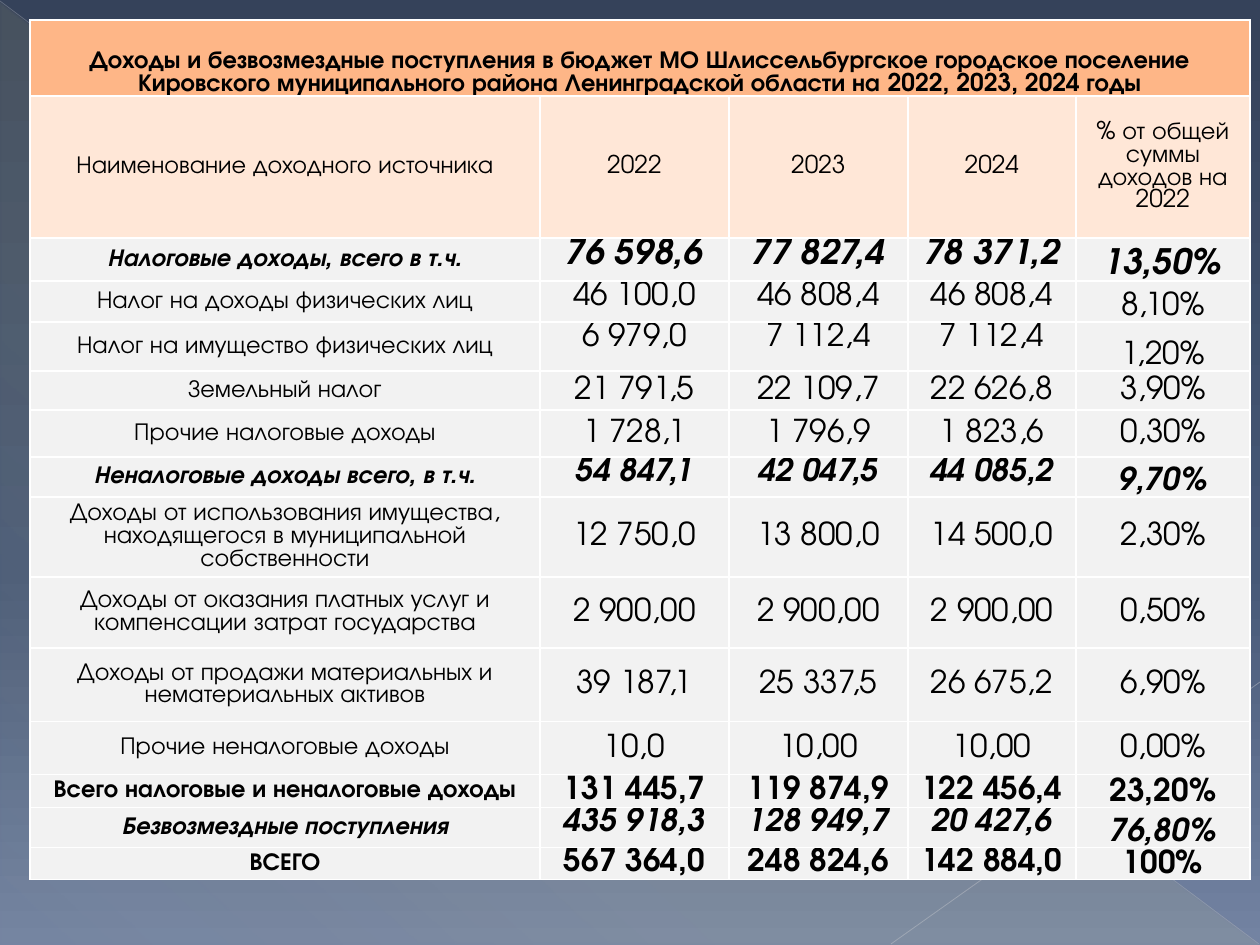
from lxml.etree import SubElement
from pptx import Presentation
from pptx.dml.color import RGBColor
from pptx.enum.shapes import MSO_CONNECTOR, MSO_SHAPE
from pptx.enum.text import MSO_ANCHOR as Anchor, PP_ALIGN
from pptx.oxml.ns import qn
from pptx.util import Pt

PX = 914400 / 126
FONT = "TeX Gyre Adventor"
BLACK = RGBColor(0x00, 0x00, 0x00)
WHITE = RGBColor(0xFF, 0xFF, 0xFF)
ORANGE = RGBColor(0xFE, 0xB6, 0x87)
PEACH = RGBColor(0xFF, 0xE7, 0xD7)
GREY = RGBColor(0xF2, 0xF2, 0xF2)
NAVY = RGBColor(0x35, 0x42, 0x5A)
SLATE = RGBColor(0x46, 0x58, 0x77)
STEEL = RGBColor(0x73, 0x83, 0xA2)
YELLOW = RGBColor(0xFF, 0xF3, 0x9D)
SILVER = RGBColor(0xBA, 0xBD, 0xC4)
LIGHT_SILVER = RGBColor(0xC1, 0xC4, 0xCA)

TITLE = ("Доходы и безвозмездные поступления в бюджет МО Шлиссельбургское городское "
         "поселение Кировского муниципального района Ленинградской области "
         "на 2022, 2023, 2024 годы")
HEADER = ("Наименование доходного источника", "2022", "2023", "2024",
          "% от общей суммы доходов на 2022")
COLUMNS = (510, 189, 179, 168, 174)
TITLE_HEIGHT, HEADER_HEIGHT = 76, 142

# height, value size, bold, italic, values split to top and bottom, texts
ROWS = (
    (43, 20, True, True, True,
     ("Налоговые доходы, всего в т.ч.", "76 598,6", "77 827,4", "78 371,2", "13,50%")),
    (41, 18, False, False, True,
     ("Налог на доходы физических лиц", "46 100,0", "46 808,4", "46 808,4", "8,10%")),
    (49, 18, False, False, True,
     ("Налог на имущество физических лиц", "6 979,0", "7 112,4", "7 112,4", "1,20%")),
    (39, 18, False, False, False,
     ("Земельный налог", "21 791,5", "22 109,7", "22 626,8", "3,90%")),
    (47, 18, False, False, False,
     ("Прочие налоговые доходы", "1 728,1", "1 796,9", "1 823,6", "0,30%")),
    (40, 18, True, True, True,
     ("Неналоговые доходы всего, в т.ч.", "54 847,1", "42 047,5", "44 085,2", "9,70%")),
    (80, 18, False, False, False,
     ("Доходы от использования имущества, находящегося в муниципальной собственности",
      "12 750,0", "13 800,0", "14 500,0", "2,30%")),
    (71, 18, False, False, False,
     ("Доходы от оказания платных услуг и компенсации затрат государства",
      "2 900,00", "2 900,00", "2 900,00", "0,50%")),
    (74, 18, False, False, False,
     ("Доходы от продажи материальных и нематериальных активов",
      "39 187,1", "25 337,5", "26 675,2", "6,90%")),
    (53, 18, False, False, False,
     ("Прочие неналоговые доходы", "10,0", "10,00", "10,00", "0,00%")),
    (33, 18, True, False, True,
     ("Всего налоговые и неналоговые доходы",
      "131 445,7", "119 874,9", "122 456,4", "23,20%")),
    (40, 18, True, True, True,
     ("Безвозмездные поступления", "435 918,3", "128 949,7", "20 427,6", "76,80%")),
    (32, 18, True, False, True,
     ("ВСЕГО", "567 364,0", "248 824,6", "142 884,0", "100%")),
)


def px(n):
    return round(n * PX)


def add_color(parent, color, alpha=100):
    clr = SubElement(parent, qn("a:srgbClr"), val=str(color))
    if alpha < 100:
        SubElement(clr, qn("a:alpha"), val=str(alpha * 1000))


def set_gradient(element, stops, angle):
    grad = element.find(".//" + qn("a:gradFill"))
    for child in list(grad):
        grad.remove(child)
    stop_list = SubElement(grad, qn("a:gsLst"))
    for position, color, alpha in stops:
        add_color(SubElement(stop_list, qn("a:gs"), pos=str(position * 1000)), color, alpha)
    SubElement(grad, qn("a:lin"), ang=str(angle * 60000), scaled="0")


def add_line(s, x1, y1, x2, y2, color, width, alpha):
    line = s.shapes.add_connector(MSO_CONNECTOR.STRAIGHT, px(x1), px(y1), px(x2), px(y2))
    line.line.width = Pt(width)
    line.line.color.rgb = color
    sp_pr = line._element.spPr
    clr = sp_pr.find(".//" + qn("a:srgbClr"))
    SubElement(clr, qn("a:alpha"), val=str(alpha * 1000))
    SubElement(sp_pr, qn("a:effectLst"))


def add_backdrop(s, x, y, w, h):
    s.background.fill.gradient()
    set_gradient(s._element, ((0, NAVY, 100), (60, SLATE, 100), (100, STEEL, 100)), 90)
    sp = s.shapes.add_shape(MSO_SHAPE.RIGHT_TRIANGLE, px(x + 1), px(y + 3), px(w - 2), px(h - 3))
    sp.shadow.inherit = False
    sp.line.fill.background()
    sp.fill.gradient()
    set_gradient(sp._element.spPr, ((0, YELLOW, 10), (70, YELLOW, 8), (100, YELLOW, 1)), 133)
    add_line(s, x, y + 1, x + w - 1, y + h - 1, SILVER, 0.39, 35)
    add_line(s, x + w, y + 682, x + 891, y + h - 1, LIGHT_SILVER, 0.47, 45)


def add_borders(cell):
    tc_pr = cell._tc.get_or_add_tcPr()
    for index, side in enumerate(("lnL", "lnR", "lnT", "lnB")):
        ln = tc_pr.makeelement(qn("a:" + side), {"w": str(Pt(1))})
        add_color(SubElement(ln, qn("a:solidFill")), WHITE)
        tc_pr.insert(index, ln)


def fill_cell(cell, text, fill, size=14, bold=False, italic=False,
              anchor=Anchor.MIDDLE, side=9, top=0):
    cell.fill.solid()
    cell.fill.fore_color.rgb = fill
    cell.margin_left = cell.margin_right = px(side)
    cell.margin_top, cell.margin_bottom = px(top), 0
    cell.vertical_anchor = anchor
    add_borders(cell)
    p = cell.text_frame.paragraphs[0]
    p.text = text
    p.alignment = PP_ALIGN.CENTER
    font = p.font
    font.name, font.size, font.bold, font.italic = FONT, Pt(size), bold, italic
    font.color.rgb = BLACK


def add_income_table(s, x, y):
    heights = (TITLE_HEIGHT, HEADER_HEIGHT, *(row[0] for row in ROWS))
    table = s.shapes.add_table(len(heights), len(COLUMNS), px(x), px(y),
                               px(sum(COLUMNS)), px(sum(heights))).table
    for column, width in zip(table.columns, COLUMNS):
        column.width = px(width)
    for row, height in zip(table.rows, heights):
        row.height = px(height)

    table.cell(0, 0).merge(table.cell(0, len(COLUMNS) - 1))
    fill_cell(table.cell(0, 0), TITLE, ORANGE, bold=True, anchor=Anchor.BOTTOM)
    for c, text in enumerate(HEADER):
        fill_cell(table.cell(1, c), text, PEACH)
    for r, (_, size, bold, italic, split, texts) in enumerate(ROWS, 2):
        fill_cell(table.cell(r, 0), texts[0], GREY, bold=bold, italic=italic)
        for c, text in enumerate(texts[1:], 1):
            anchor = Anchor.MIDDLE
            if split:
                anchor = Anchor.BOTTOM if c == len(COLUMNS) - 1 else Anchor.TOP
            fill_cell(table.cell(r, c), text, GREY, size, bold, italic, anchor, 1, 1)


def main():
    prs = Presentation()
    prs.slide_width, prs.slide_height = px(1260), px(945)
    s = prs.slides.add_slide(prs.slide_layouts[6])
    add_backdrop(s, 0, 0, 1260, 945)
    add_income_table(s, 30, 20)
    prs.save("out.pptx")


if __name__ == "__main__":
    main()
